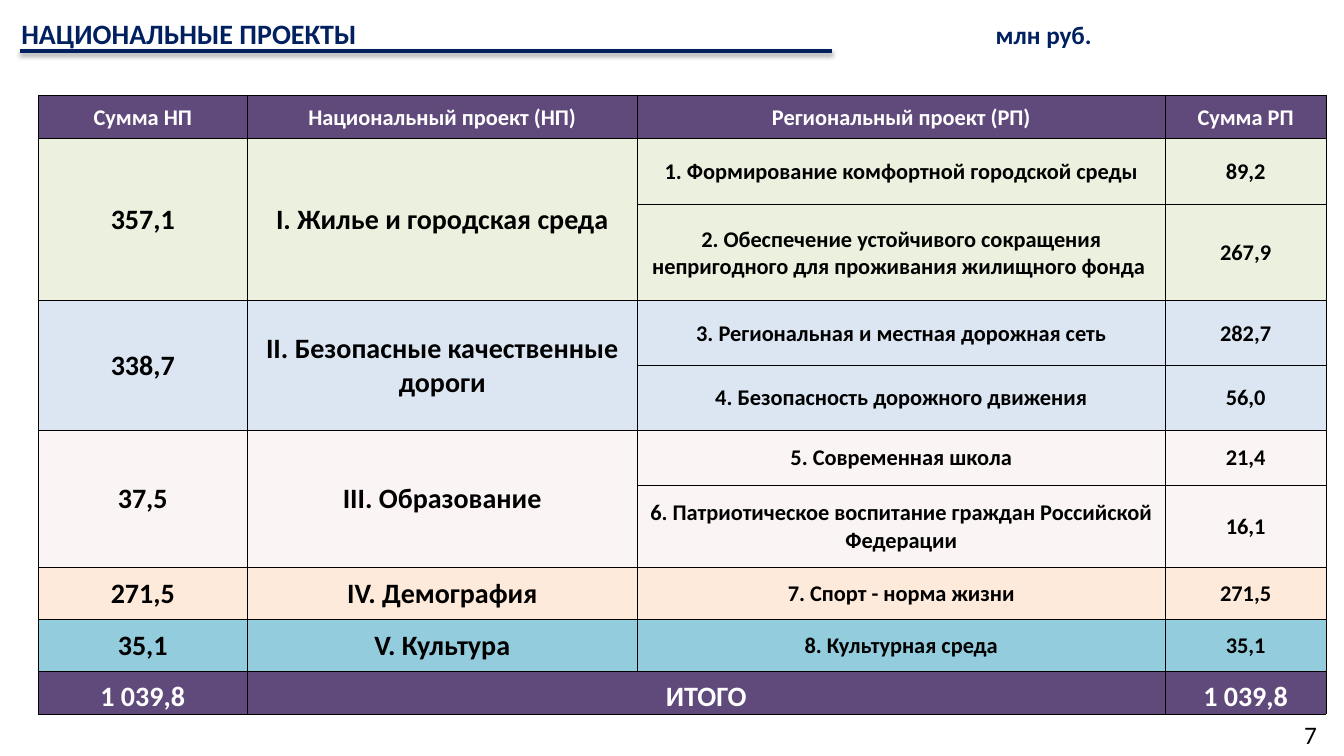
"""Builds the slide on national projects and their sums."""
from lxml import etree
from pptx import Presentation
from pptx.dml.color import RGBColor
from pptx.enum.shapes import MSO_CONNECTOR
from pptx.enum.text import MSO_ANCHOR, PP_ALIGN
from pptx.oxml.ns import qn
from pptx.util import Pt

LEFT, CENTER = PP_ALIGN.LEFT, PP_ALIGN.CENTER
TOP, MIDDLE, BOTTOM = MSO_ANCHOR.TOP, MSO_ANCHOR.MIDDLE, MSO_ANCHOR.BOTTOM
STRAIGHT = MSO_CONNECTOR.STRAIGHT

COLORS = {
    "navy": "002060", "black": "000000", "white": "FFFFFF", "purple": "604A7B",
    "green": "EBF1DE", "blue": "DCE6F2", "rose": "FAF4F4", "peach": "FDEADA",
    "teal": "93CDDD",
}
COLUMN_WIDTHS = [149.2, 278.6, 377.2, 114.8]
ROW_HEIGHTS = [30.8, 47.2, 68.4, 46.6, 45.9, 39.8, 58.1, 37.4, 36.9, 30.9]
HEADERS = ["Сумма НП", "Национальный проект (НП)", "Региональный проект (РП)", "Сумма РП"]
PROJECTS = [
    ("357,1", "I. Жилье и городская среда", "green", [
        ("1. Формирование комфортной городской среды", "89,2"),
        ("2. Обеспечение устойчивого сокращения непригодного для проживания жилищного фонда ", "267,9"),
    ]),
    ("338,7", "II. Безопасные качественные дороги", "blue", [
        ("3. Региональная и местная дорожная сеть", "282,7"),
        ("4. Безопасность дорожного движения", "56,0"),
    ]),
    ("37,5", "III. Образование", "rose", [
        ("5. Современная школа", "21,4"),
        ("6. Патриотическое воспитание граждан Российской Федерации", "16,1"),
    ]),
    ("271,5", "IV. Демография", "peach", [("7. Спорт - норма жизни", "271,5")]),
    ("35,1", "V. Культура", "teal", [("8. Культурная среда", "35,1")]),
]
TOTAL = "1 039,8"


class SlideBuilder:
    """Holds the style and the current slide."""

    def __init__(self, slide, font="Calibri"):
        self.slide = slide
        self.font = font

    def color(self, name):
        return RGBColor.from_string(COLORS[name])

    def add_text(self, frame, text, size, color, bold=True, align=CENTER):
        paragraph = frame.paragraphs[0]
        paragraph.alignment = align
        run = paragraph.add_run()
        run.text = text
        run.font.name = self.font
        run.font.size = Pt(size)
        run.font.bold = bold
        run.font.color.rgb = self.color(color)

    def title(self, text, left, top, width, height):
        shape = self.slide.shapes.title
        shape.left, shape.top, shape.width, shape.height = map(Pt, (left, top, width, height))
        shape.text_frame.vertical_anchor = TOP
        self.add_text(shape.text_frame, text, 20, "navy", align=LEFT)

    def label(self, text, left, top, width, height, color, bold=True, align=CENTER, wrap=True):
        shape = self.slide.shapes.add_textbox(*map(Pt, (left, top, width, height)))
        shape.text_frame.word_wrap = wrap
        self.add_text(shape.text_frame, text, 18, color, bold, align)

    def shadowed_line(self, left, right, top):
        line = self.slide.shapes.add_connector(STRAIGHT, *map(Pt, (left, top, right, top)))
        line.line.color.rgb = self.color("navy")
        line.line.width = Pt(3)
        effects = etree.SubElement(line._element.spPr, qn("a:effectLst"))
        shadow = etree.SubElement(effects, qn("a:outerShdw"), blurRad=str(Pt(3.1)),
                                  dist=str(Pt(1.8)), dir="5400000", rotWithShape="0")
        shade = etree.SubElement(shadow, qn("a:srgbClr"), val=COLORS["black"])
        etree.SubElement(shade, qn("a:alpha"), val="35000")

    def table(self, left, top, widths, heights):
        frame = self.slide.shapes.add_table(
            len(heights), len(widths), Pt(left), Pt(top), Pt(sum(widths)), Pt(sum(heights)))
        table = frame.table
        for column, width in zip(table.columns, widths):
            column.width = Pt(width)
        for row, height in zip(table.rows, heights):
            row.height = Pt(height)
        for cell in table.iter_cells():
            self.border(cell)
        return table

    def border(self, cell):
        properties = cell._tc.get_or_add_tcPr()
        for side in ("lnL", "lnR", "lnT", "lnB"):
            edge = etree.SubElement(properties, qn(f"a:{side}"), w=str(Pt(0.5)))
            fill = etree.SubElement(edge, qn("a:solidFill"))
            etree.SubElement(fill, qn("a:srgbClr"), val=COLORS["black"])

    def cell(self, cell, text, size, color, fill, anchor=MIDDLE):
        cell.fill.solid()
        cell.fill.fore_color.rgb = self.color(fill)
        cell.margin_left = cell.margin_right = cell.margin_top = Pt(0.75)
        cell.margin_bottom = Pt(0)
        cell.vertical_anchor = anchor
        self.add_text(cell.text_frame, text, size, color)


def fill_projects(builder, table):
    for column, header in enumerate(HEADERS):
        builder.cell(table.cell(0, column), header, 16, "white", "purple")
    row = 1
    for amount, name, fill, regional_projects in PROJECTS:
        last = row + len(regional_projects) - 1
        for column, text in enumerate((amount, name)):
            if last > row:
                table.cell(row, column).merge(table.cell(last, column))
            builder.cell(table.cell(row, column), text, 20, "black", fill)
        for regional_row, texts in enumerate(regional_projects, row):
            for column, text in enumerate(texts, 2):
                builder.cell(table.cell(regional_row, column), text, 16, "black", fill)
        row = last + 1
    table.cell(row, 1).merge(table.cell(row, 2))
    for column, text in ((0, TOTAL), (1, "ИТОГО"), (3, TOTAL)):
        builder.cell(table.cell(row, column), text, 20, "white", "purple", BOTTOM)


def main():
    presentation = Presentation()
    presentation.slide_width, presentation.slide_height = Pt(960), Pt(540)
    builder = SlideBuilder(presentation.slides.add_slide(presentation.slide_layouts[5]))
    builder.title("НАЦИОНАЛЬНЫЕ ПРОЕКТЫ", 8, 8, 463, 31.5)
    builder.label("7", 924.5, 510.5, 44.5, 29, "black", bold=False, align=LEFT)
    builder.label("млн руб.", 703.5, 10, 84, 29, "navy", wrap=False)
    builder.shadowed_line(14.4, 594, 36.7)
    fill_projects(builder, builder.table(27.4, 68.2, COLUMN_WIDTHS, ROW_HEIGHTS))
    presentation.save("out.pptx")


if __name__ == "__main__":
    main()
